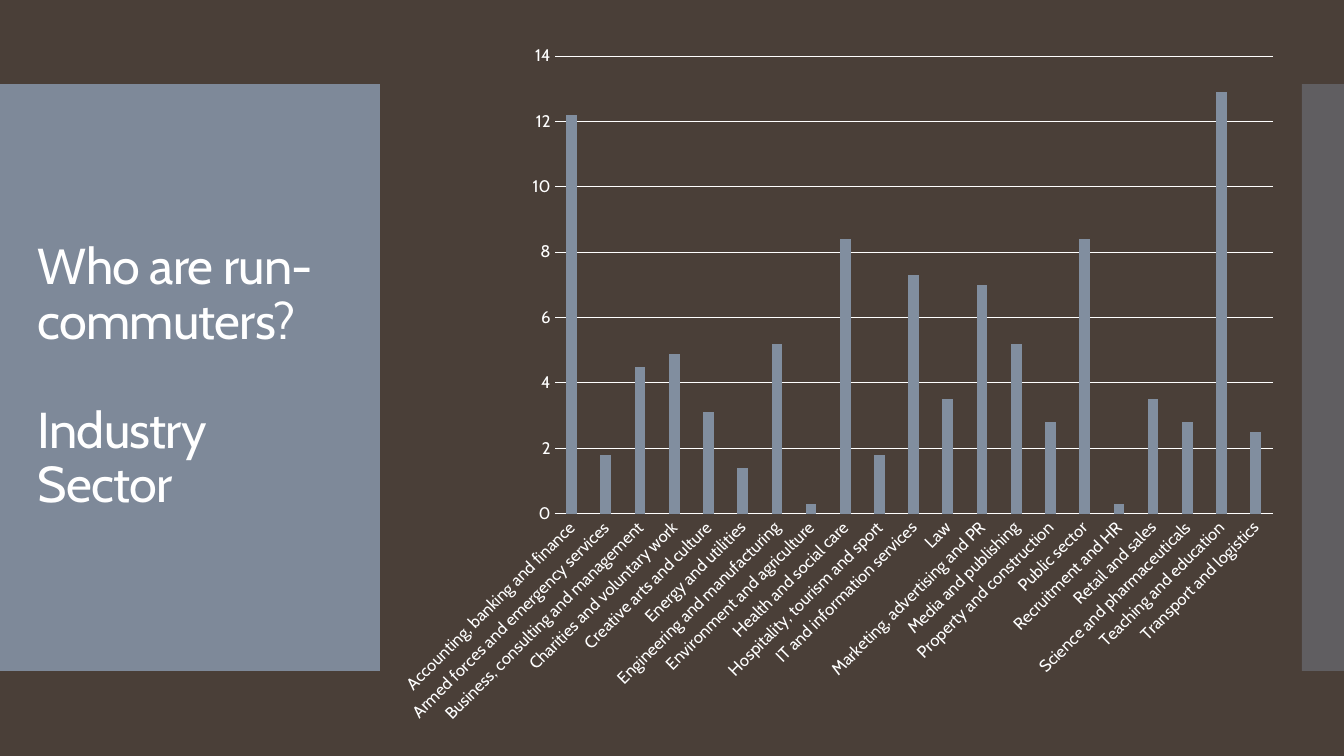
"""Build the slide on the industry sectors of run-commuters."""
import pptx
import pptx.chart.data
import pptx.dml.color
import pptx.enum.chart
import pptx.enum.shapes
import pptx.enum.text
import pptx.oxml
import pptx.oxml.ns
import pptx.util

PX = 914400 / 100.8
FONT = "Cabin"
BROWN = pptx.dml.color.RGBColor(0x4A, 0x3F, 0x38)
SLATE = pptx.dml.color.RGBColor(0x81, 0x8E, 0x9F)
WHITE = pptx.dml.color.RGBColor(0xFF, 0xFF, 0xFF)

SECTORS = {
    "Accounting, banking and finance": 12.2,
    "Armed forces and emergency services": 1.8,
    "Business, consulting and management": 4.5,
    "Charities and voluntary work": 4.9,
    "Creative arts and culture": 3.1,
    "Energy and utilities": 1.4,
    "Engineering and manufacturing": 5.2,
    "Environment and agriculture": 0.3,
    "Health and social care": 8.4,
    "Hospitality, tourism and sport": 1.8,
    "IT and information services": 7.3,
    "Law": 3.5,
    "Marketing, advertising and PR": 7,
    "Media and publishing": 5.2,
    "Property and construction": 2.8,
    "Public sector": 8.4,
    "Recruitment and HR": 0.3,
    "Retail and sales": 3.5,
    "Science and pharmaceuticals": 2.8,
    "Teaching and education": 12.9,
    "Transport and logistics": 2.5,
}


def box(*lengths):
    return [pptx.util.Emu(round(length * PX)) for length in lengths]


def apply(target, values):
    for key, value in values.items():
        setattr(target, key, value)


deck = pptx.Presentation()
deck.slide_width, deck.slide_height = box(1344, 756)
slide = deck.slides.add_slide(deck.slide_layouts[6])
slide.background.fill.solid()
slide.background.fill.fore_color.rgb = BROWN

for left, width, opacity in [(0, 380, 95), (1302, 42, 40)]:
    panel = slide.shapes.add_shape(
        pptx.enum.shapes.MSO_SHAPE.RECTANGLE, *box(left, 84, width, 587))
    panel.shadow.inherit = False
    panel.line.fill.background()
    panel.fill.solid()
    panel.fill.fore_color.rgb = SLATE
    tint = panel.fill._xPr.find(".//" + pptx.oxml.ns.qn("a:srgbClr"))
    alpha = pptx.oxml.parse_xml(
        f'<a:alpha {pptx.oxml.ns.nsdecls("a")} val="{opacity * 1000}"/>')
    tint.append(alpha)

heading = slide.shapes.add_textbox(*box(28, 124, 325, 507)).text_frame
apply(heading, {"word_wrap": True,
                "vertical_anchor": pptx.enum.text.MSO_ANCHOR.MIDDLE})
heading.text = "Who are run-commuters?\nIndustry Sector"
for paragraph in heading.paragraphs:
    paragraph.line_spacing = 0.9
    apply(paragraph.runs[0].font, {"name": FONT, "size": pptx.util.Pt(36)})
    paragraph.runs[0].font.color.rgb = WHITE
    paragraph.runs[0].font._element.set("spc", "-60")
heading.paragraphs[1].space_before = pptx.util.Pt(39)

sector_data = pptx.chart.data.CategoryChartData()
sector_data.categories = SECTORS.keys()
sector_data.add_series("Series 1", SECTORS.values())
chart = slide.shapes.add_chart(
    pptx.enum.chart.XL_CHART_TYPE.COLUMN_CLUSTERED,
    *box(384, 32, 907, 706), sector_data).chart
apply(chart, {"has_legend": False, "has_title": False})
apply(chart.font, {"name": FONT, "size": pptx.util.Pt(10)})
chart.font.color.rgb = WHITE

columns = chart.plots[0]
apply(columns, {"gap_width": 219, "overlap": -27, "vary_by_categories": False})
columns.series[0].format.fill.solid()
columns.series[0].format.fill.fore_color.rgb = SLATE

sector_axis, share_axis = chart.category_axis, chart.value_axis
no_tick = pptx.enum.chart.XL_TICK_MARK.NONE
for axis in (sector_axis, share_axis):
    apply(axis, {"major_tick_mark": no_tick, "minor_tick_mark": no_tick})
    apply(axis.tick_labels.font, {"name": FONT, "size": pptx.util.Pt(12)})
    axis.tick_labels.font.color.rgb = WHITE
apply(share_axis, {"minimum_scale": 0, "maximum_scale": 14, "major_unit": 2,
                   "has_major_gridlines": True})
share_axis.format.line.fill.background()
for rule in (sector_axis.format.line, share_axis.major_gridlines.format.line):
    rule.color.rgb = WHITE
    rule.width = pptx.util.Pt(0.75)
label_body = sector_axis._element.find(".//" + pptx.oxml.ns.qn("a:bodyPr"))
apply_rotation = {"rot": "-2700000", "vert": "horz"}
for key, value in apply_rotation.items():
    label_body.set(key, value)

deck.save("out.pptx")
